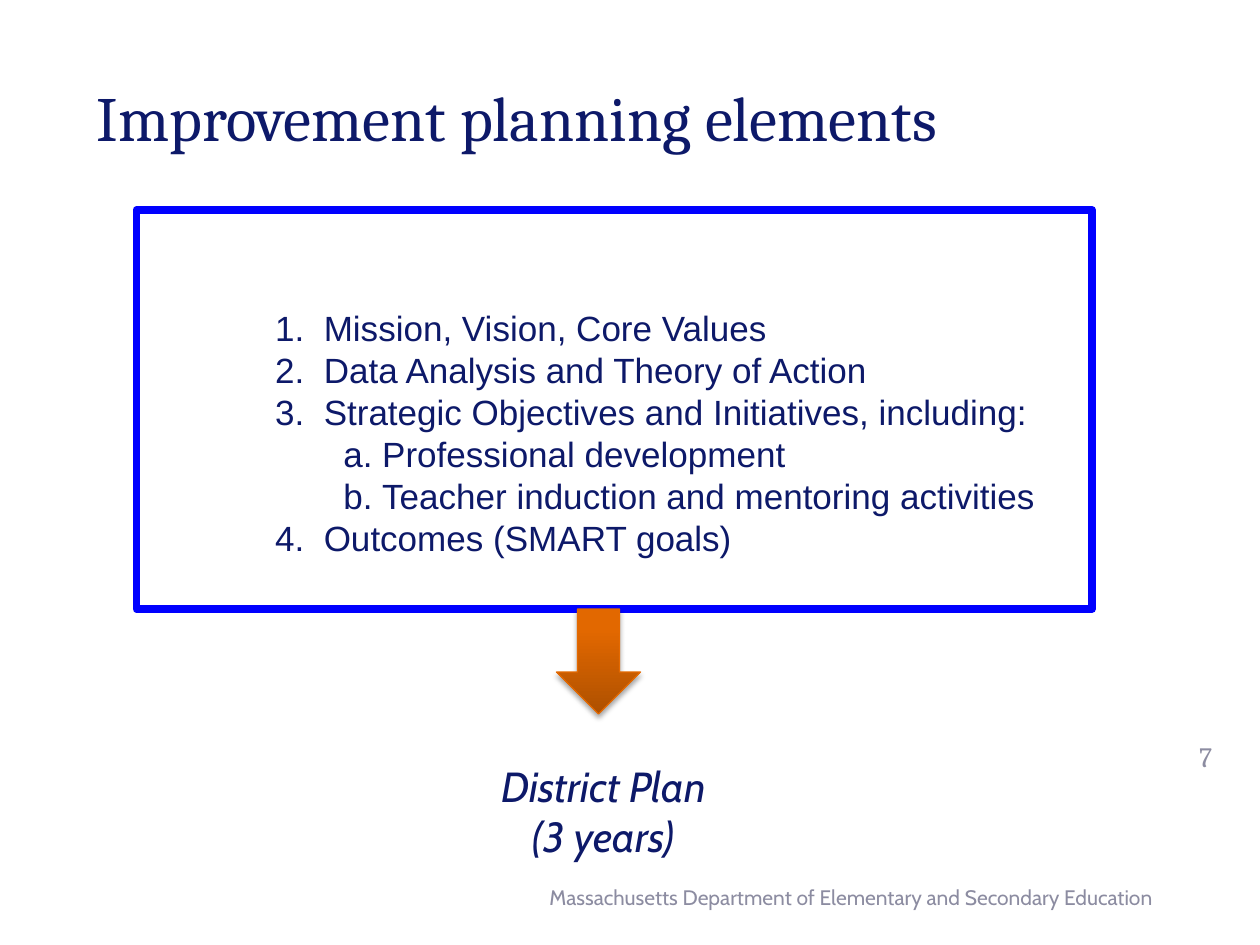
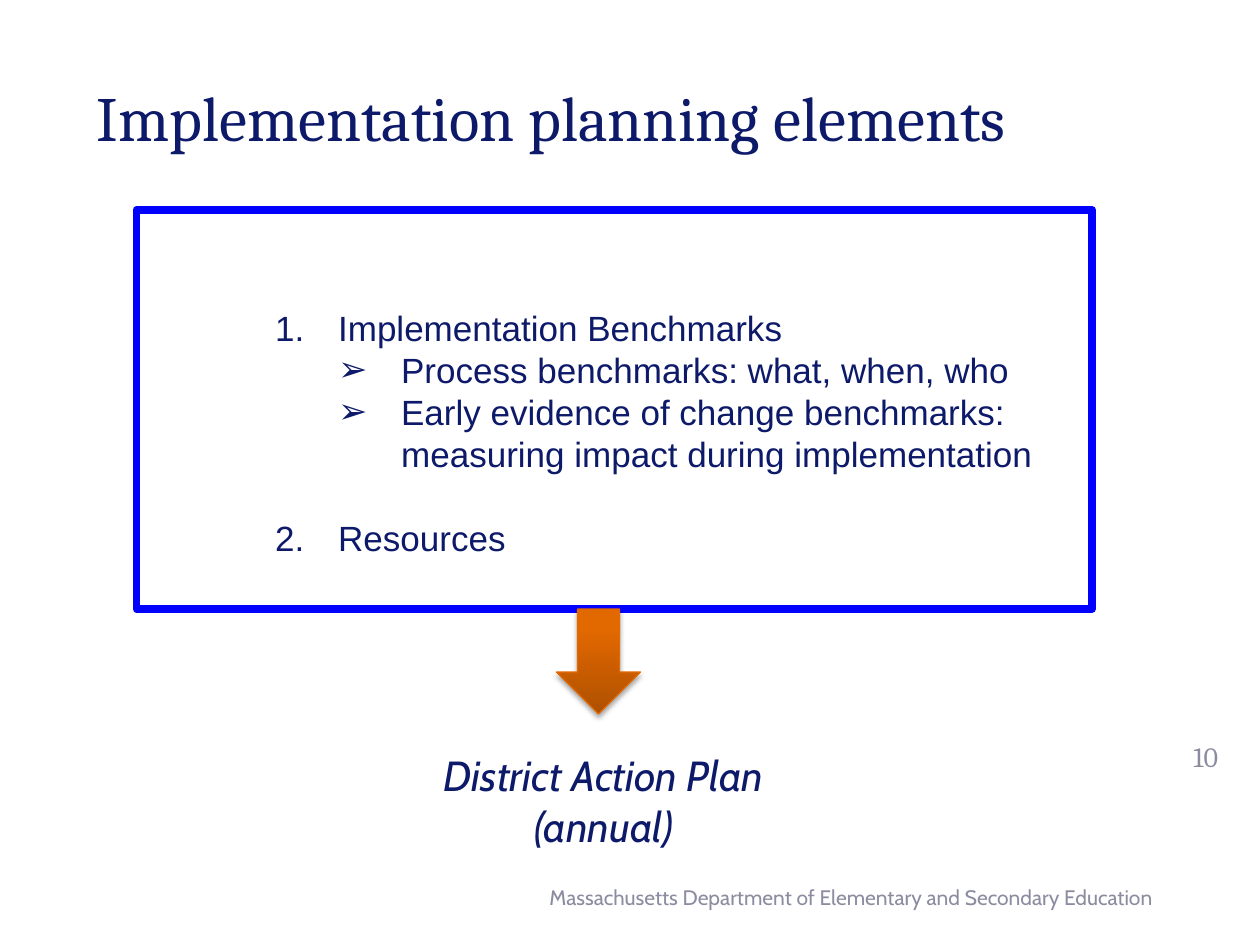
from lxml import etree
from pptx import Presentation
from pptx import util as u
from pptx.dml import color
from pptx.enum import shapes, text
from pptx.oxml import ns

Pt = u.Pt
COLORS = {
    "navy": "0D1969",
    "gray": "8C8CA1",
    "frame": "0000FF",
    "arrow_edge": "E46900",
    "arrow_dark": "AE5000",
    "arrow_mid": "E26800",
    "arrow_light": "E36800",
    "shadow": "000000",
}
LEFT, CENTER, RIGHT = text.PP_ALIGN.LEFT, text.PP_ALIGN.CENTER, text.PP_ALIGN.RIGHT
AGENCY = "Massachusetts Department of Elementary and Secondary Education"


def rgb(name):
    return color.RGBColor.from_string(COLORS[name])


def add_element(parent, tag, **attributes):
    element = etree.SubElement(parent, ns.qn(tag))
    for name, value in attributes.items():
        element.set(name, str(value))
    return element


def add_color(parent, name):
    return add_element(parent, "a:srgbClr", val=COLORS[name])


def write(para, words, font="Arial", size=20, ink="navy", italic=False, align=LEFT):
    para.alignment = align
    span = para.add_run()
    span.text = words
    span.font.name = font
    span.font.size = Pt(size)
    span.font.italic = italic
    span.font.bold = False
    span.font.color.rgb = rgb(ink)


class PlanDeck:
    def __init__(self):
        self.deck = Presentation()
        self.deck.slide_width, self.deck.slide_height = Pt(720), Pt(540)
        self.page = None

    def place(self, box, left, top, width, height):
        box.left, box.top = Pt(left), Pt(top)
        box.width, box.height = Pt(width), Pt(height)

    def start_page(self, title, number):
        self.page = self.deck.slides.add_slide(self.deck.slide_layouts[1])
        box = self.page.shapes.title
        self.place(box, 48, 21.6, 624, 90)
        box.text_frame.auto_size = text.MSO_AUTO_SIZE.NONE
        box.text_frame.vertical_anchor = text.MSO_ANCHOR.MIDDLE
        write(box.text_frame.paragraphs[0], title, font="Cambria", size=36)
        self.label([AGENCY], 240, 498, 426, 29, font="Cabin", size=12, ink="gray", align=RIGHT)
        self.label([number], 668, 414, 42, 36, font="Cambria", size=16, ink="gray", align=CENTER)

    def label(self, lines, left, top, width, height, anchor=text.MSO_ANCHOR.MIDDLE, **style):
        box = self.page.shapes.add_textbox(Pt(left), Pt(top), Pt(width), Pt(height))
        frame = box.text_frame
        frame.word_wrap = True
        frame.vertical_anchor = anchor
        for index, line in enumerate(lines):
            para = frame.add_paragraph() if index else frame.paragraphs[0]
            write(para, line, **style)

    def framed_list(self, items, levels):
        box = self.page.placeholders[1]
        self.place(box, 78, 120, 546, 228)
        box.line.color.rgb = rgb("frame")
        box.line.width = Pt(4.5)
        frame = box.text_frame
        frame.auto_size = text.MSO_AUTO_SIZE.NONE
        frame.vertical_anchor = text.MSO_ANCHOR.TOP
        frame.margin_top = Pt(55.2)
        for index, (level, words, gap) in enumerate(items):
            para = frame.add_paragraph() if index else frame.paragraphs[0]
            para.level = level
            para.line_spacing = Pt(24)
            para.space_before = Pt(gap)
            para.space_after = Pt(0)
            self.bullet(para, *levels[level])
            write(para, words)

    def bullet(self, para, margin, hanging, mark):
        properties = para._p.get_or_add_pPr()
        properties.set("marL", str(Pt(margin)))
        properties.set("indent", str(-Pt(hanging)))
        add_element(properties, "a:buFont", typeface="Arial")
        if mark.endswith("Period"):
            add_element(properties, "a:buAutoNum", type=mark)
        else:
            add_element(properties, "a:buChar", char=mark)

    def down_arrow(self):
        arrow = self.page.shapes.add_shape(
            shapes.MSO_SHAPE.DOWN_ARROW, Pt(318), Pt(348), Pt(48), Pt(60))
        arrow.line.color.rgb = rgb("arrow_edge")
        arrow.line.width = Pt(0.75)
        arrow.shadow.inherit = False
        properties = arrow._element.spPr
        gradient = etree.Element(ns.qn("a:gradFill"), rotWithShape="1")
        stops = add_element(gradient, "a:gsLst")
        for percent, name in ((0, "arrow_dark"), (80, "arrow_mid"), (100, "arrow_light")):
            add_color(add_element(stops, "a:gs", pos=percent * 1000), name)
        add_element(gradient, "a:lin", ang=270 * 60000, scaled=0)
        properties.find(ns.qn("a:prstGeom")).addnext(gradient)
        shadow = add_element(
            properties.find(ns.qn("a:effectLst")), "a:outerShdw",
            blurRad=Pt(3.1), dist=Pt(1.8), dir=90 * 60000, rotWithShape=0)
        add_element(add_color(shadow, "shadow"), "a:alpha", val=35000)

    def plan_page(self, title, number, items, levels, result, result_top):
        self.start_page(title, number)
        self.framed_list(items, levels)
        self.down_arrow()
        self.label(result, 138, result_top, 414, 66, anchor=text.MSO_ANCHOR.TOP,
                   font="Cabin", size=24, italic=True, align=CENTER)


def main():
    plan = PlanDeck()
    plan.plan_page(
        "Improvement planning elements", "7",
        [
            (0, "Mission, Vision, Core Values", 0),
            (0, "Data Analysis and Theory of Action", 0),
            (0, "Strategic Objectives and Initiatives, including:", 0),
            (1, "Professional development", 0),
            (1, "Teacher induction and mentoring activities", 0),
            (0, "Outcomes (SMART goals)", 0),
        ],
        [(99.8, 27.8, "arabicPeriod"), (133.2, 22.2, "alphaLcPeriod")],
        ["District Plan", "(3 years)"], 431)
    plan.plan_page(
        "Implementation planning elements", "10",
        [
            (0, "Implementation Benchmarks", 0),
            (1, "Process benchmarks: what, when, who", 0),
            (1, "Early evidence of change benchmarks: measuring impact during implementation", 0),
            (0, "Resources", 24),
        ],
        [(108, 36, "arabicPeriod"), (144, 36, "➢")],
        ["District Action Plan", "(annual)"], 425)
    plan.deck.save("out.pptx")


if __name__ == "__main__":
    main()
